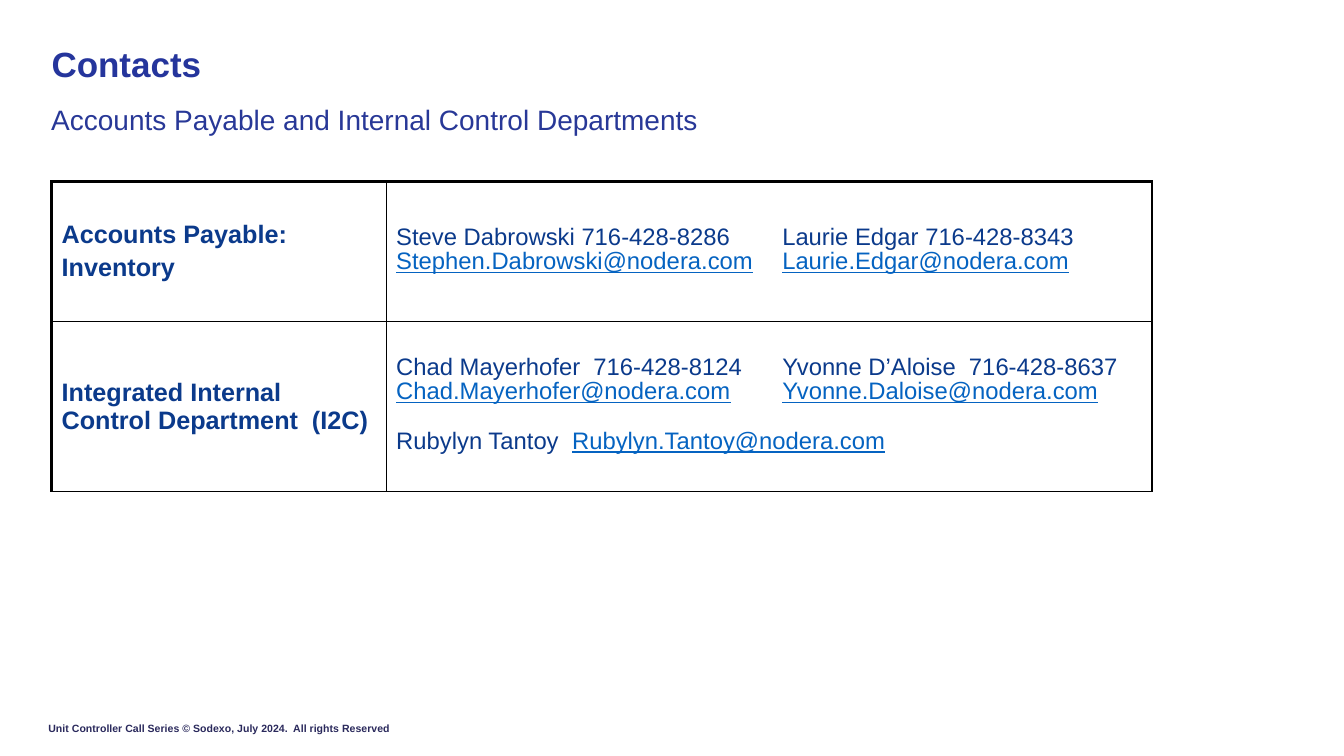
from dataclasses import dataclass

from lxml import etree
from pptx import Presentation
from pptx import util as u
from pptx.dml.color import RGBColor
from pptx.enum import text
from pptx.oxml import ns

FONT = "Arial"
TITLE_BLUE = RGBColor(0x25, 0x35, 0x9C)
SUBTITLE_BLUE = RGBColor(0x28, 0x38, 0x97)
FOOTER_NAVY = RGBColor(0x2A, 0x29, 0x5C)
TABLE_BLUE = RGBColor(0x0B, 0x3A, 0x8B)
LINK_BLUE = RGBColor(0x05, 0x63, 0xC1)
BORDER_BLACK = RGBColor(0x00, 0x00, 0x00)

SECOND_CONTACT = u.Cm(9.73)
THIN, THICK = 1, 2.25


@dataclass
class Line:
    pieces: tuple[str, ...]
    space_before: float = 3


@dataclass
class Department:
    heading: tuple[str, ...]
    contacts: tuple[Line, ...]
    height: float


@dataclass
class Label:
    words: str
    left: float
    top: float
    width: float
    height: float
    size: float
    color: RGBColor
    bold: bool
    line_spacing: float
    anchor: text.MSO_ANCHOR
    margin: tuple[float, float] = (0, 0)


DEPARTMENTS = (
    Department(
        ("Accounts Payable:", "Inventory"),
        (
            Line(("Steve Dabrowski 716-428-8286", "\t", "Laurie Edgar 716-428-8343")),
            Line(("Stephen.Dabrowski@nodera.com", "\t", "Laurie.Edgar@nodera.com")),
        ),
        3.53,
    ),
    Department(
        ("Integrated Internal Control Department  (I2C)",),
        (
            Line(("Chad Mayerhofer  716-428-8124", "\t", "Yvonne D’Aloise  716-428-8637")),
            Line(("Chad.Mayerhofer@nodera.com", "\t", "Yvonne.Daloise@nodera.com")),
            Line(("Rubylyn Tantoy  ", "Rubylyn.Tantoy@nodera.com"), 21),
        ),
        4.29,
    ),
)
TITLE = Label("Contacts", 1.3, 1.19, 29.21, 0.97, 25, TITLE_BLUE, True, 0.9,
              text.MSO_ANCHOR.MIDDLE)
SUBTITLE = Label("Accounts Payable and Internal Control Departments",
                 1.04, 2.21, 29.21, 0.99, 20, SUBTITLE_BLUE, False, 1.3,
                 text.MSO_ANCHOR.TOP, (0.25, 0.13))
FOOTER = Label("Unit Controller Call Series © Sodexo, July 2024.  All rights Reserved",
               1.22, 18.19, 11.43, 0.33, 7.5, FOOTER_NAVY, True, 1,
               text.MSO_ANCHOR.MIDDLE)


def style_span(span, size: float, color: RGBColor, bold: bool) -> None:
    span.font.name = FONT
    span.font.size = u.Pt(size)
    span.font.bold = bold
    span.font.color.rgb = color


def fill_label(box, label: Label) -> None:
    box.left, box.top = u.Cm(label.left), u.Cm(label.top)
    box.width, box.height = u.Cm(label.width), u.Cm(label.height)
    frame = box.text_frame
    frame.text = label.words
    frame.word_wrap = True
    frame.auto_size = text.MSO_AUTO_SIZE.NONE
    frame.vertical_anchor = label.anchor
    side, edge = label.margin
    frame.margin_left = frame.margin_right = u.Cm(side)
    frame.margin_top = frame.margin_bottom = u.Cm(edge)
    para = frame.paragraphs[0]
    para.alignment = text.PP_ALIGN.LEFT
    para.line_spacing = label.line_spacing
    style_span(para.runs[0], label.size, label.color, label.bold)


def add_tab_stop(para, position: int) -> None:
    stops = etree.SubElement(para._p.get_or_add_pPr(), ns.qn("a:tabLst"))
    etree.SubElement(stops, ns.qn("a:tab"), pos=str(position), algn="l")


def fill_cell(cell, lines: tuple[Line, ...], size: float, bold: bool,
              line_spacing: float, alignment: text.PP_ALIGN) -> None:
    cell.vertical_anchor = text.MSO_ANCHOR.MIDDLE
    frame = cell.text_frame
    for index, line in enumerate(lines):
        para = frame.add_paragraph() if index else frame.paragraphs[0]
        if "\t" in line.pieces:
            add_tab_stop(para, SECOND_CONTACT)
        para.alignment = alignment
        para.line_spacing = line_spacing
        para.space_before = u.Pt(line.space_before if index else 0)
        for piece in line.pieces:
            span = para.add_run()
            span.text = piece
            is_address = "@" in piece
            style_span(span, size, LINK_BLUE if is_address else TABLE_BLUE, bold)
            span.font.underline = is_address


def set_borders(cell, widths: dict[str, float]) -> None:
    properties = cell._tc.get_or_add_tcPr()
    for side, width in widths.items():
        border = etree.SubElement(properties, ns.qn(f"a:ln{side}"), w=str(u.Pt(width)))
        paint = etree.SubElement(border, ns.qn("a:solidFill"))
        etree.SubElement(paint, ns.qn("a:srgbClr"), val=str(BORDER_BLACK))
    cell.fill.background()


def add_contacts(page) -> None:
    widths = (8.43, 19.3)
    frame = page.shapes.add_table(
        len(DEPARTMENTS), len(widths), u.Cm(1.3), u.Cm(4.57),
        u.Cm(sum(widths)), u.Cm(sum(item.height for item in DEPARTMENTS)))
    table = frame.table
    table.first_row = table.horz_banding = False
    for column, width in zip(table.columns, widths):
        column.width = u.Cm(width)
    for index, department in enumerate(DEPARTMENTS):
        table.rows[index].height = u.Cm(department.height)
        name, people = table.cell(index, 0), table.cell(index, 1)
        heading = tuple(Line((words,)) for words in department.heading)
        # A justified heading is only used where each line is its own paragraph
        aligned = text.PP_ALIGN.JUSTIFY if len(heading) > 1 else text.PP_ALIGN.LEFT
        fill_cell(name, heading, 18, True, 1, aligned)
        fill_cell(people, department.contacts, 17, False, 0.75, text.PP_ALIGN.LEFT)
        top = THIN if index else THICK
        set_borders(name, {"L": THICK, "R": THIN, "T": top, "B": THIN})
        set_borders(people, {"L": THIN, "R": THICK, "T": top, "B": THIN})


def add_label(page, label: Label) -> None:
    fill_label(page.shapes.add_textbox(0, 0, 0, 0), label)


def main() -> None:
    deck = Presentation()
    deck.slide_width, deck.slide_height = u.Cm(33.87), u.Cm(19.05)
    page = deck.slides.add_slide(deck.slide_layouts.get_by_name("Title Only"))

    # Title, footer and subtitle
    fill_label(page.shapes.title, TITLE)
    add_label(page, FOOTER)
    add_label(page, SUBTITLE)

    # Contacts by department
    add_contacts(page)
    deck.save("out.pptx")


if __name__ == "__main__":
    main()
